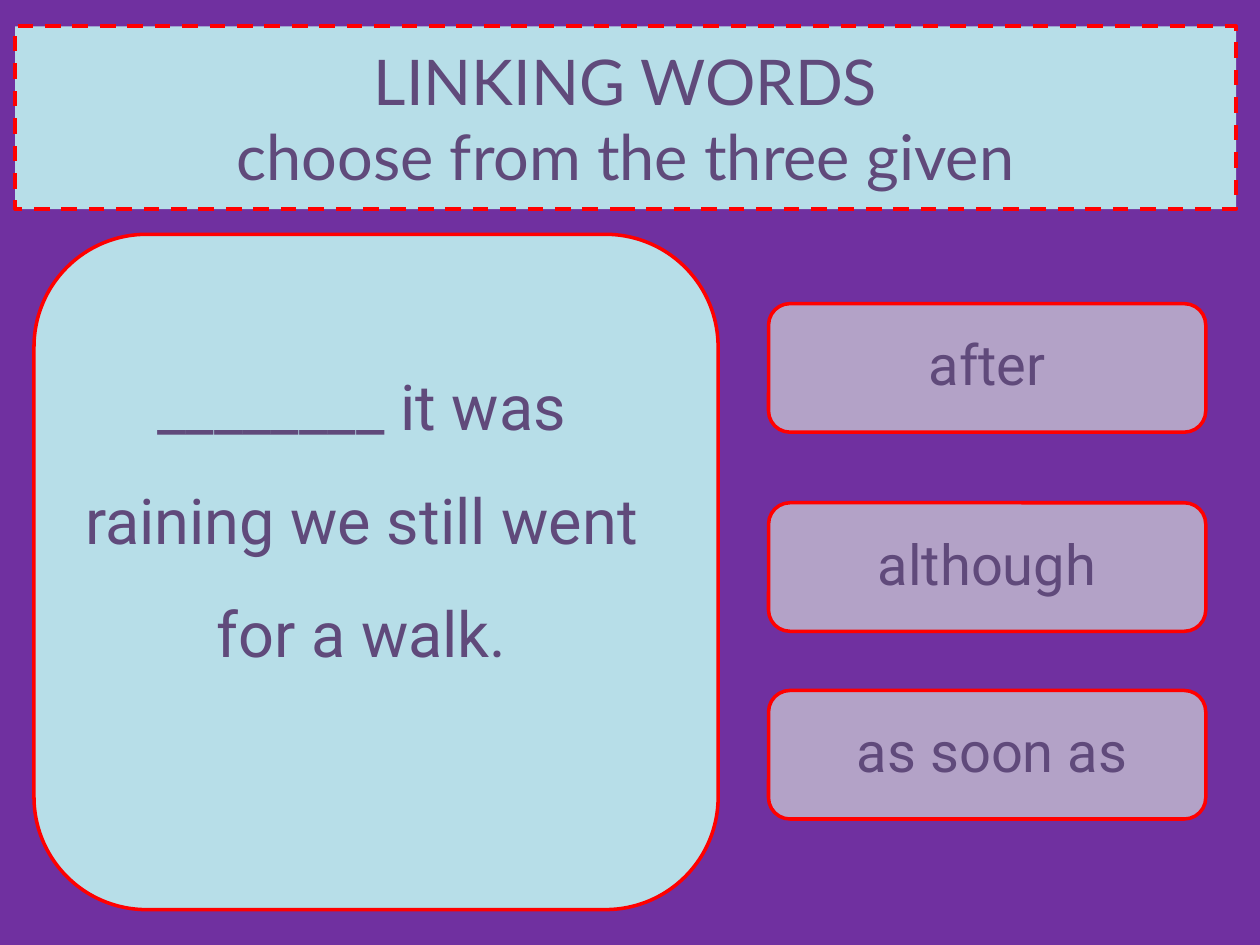
from dataclasses import dataclass

from lxml import etree
from pptx import Presentation
from pptx.dml.color import RGBColor
from pptx.enum import dml, shapes, text
from pptx.oxml import ns
from pptx.util import Inches, Pt


@dataclass(frozen=True)
class Theme:
    background: str = "7030A0"
    panel: str = "B7DEE8"
    option: str = "B3A2C7"
    outline: str = "FF0000"
    ink: str = "604A7B"
    title_font: str = "Lato"
    body_font: str = "Roboto"
    large: int = 36
    medium: int = 32


def write(frame, content, *, font, size, color, spacing=None):
    """Fill a text frame with centred paragraphs, one for each line of content."""
    frame.word_wrap = True
    frame.text = content
    for paragraph in frame.paragraphs:
        paragraph.alignment = text.PP_ALIGN.CENTER
        if spacing:
            paragraph.line_spacing = spacing
        for run in paragraph.runs:
            run.font.name = font
            run.font.size = Pt(size)
            run.font.color.rgb = RGBColor.from_string(color)


class SlideBuilder:
    def __init__(self, slide, theme):
        self.slide = slide
        self.theme = theme

    def background(self):
        fill = self.slide.background.fill
        fill.solid()
        fill.fore_color.rgb = RGBColor.from_string(self.theme.background)

    def paint(self, shape, color, width):
        shape.fill.solid()
        shape.fill.fore_color.rgb = RGBColor.from_string(color)
        shape.line.color.rgb = RGBColor.from_string(self.theme.outline)
        shape.line.width = Pt(width)

    def title(self, content, left, top, width, height):
        """Turn the title placeholder into a dashed, rounded banner."""
        banner = self.slide.shapes.title
        banner.left, banner.top = Inches(left), Inches(top)
        banner.width, banner.height = Inches(width), Inches(height)
        outline = etree.SubElement(
            banner.element.spPr, ns.qn("a:prstGeom"), prst="roundRect")
        etree.SubElement(outline, ns.qn("a:avLst"))
        self.paint(banner, self.theme.panel, 2.25)
        banner.line.dash_style = dml.MSO_LINE.DASH
        write(banner.text_frame, content, font=self.theme.title_font,
              size=self.theme.large, color=self.theme.ink)
        banner.text_frame.auto_size = text.MSO_AUTO_SIZE.NONE
        banner.text_frame.vertical_anchor = text.MSO_ANCHOR.MIDDLE

    def card(self, color, left, top, width, height):
        card = self.slide.shapes.add_shape(
            shapes.MSO_SHAPE.ROUNDED_RECTANGLE,
            Inches(left), Inches(top), Inches(width), Inches(height))
        card.shadow.inherit = False
        self.paint(card, color, 2)

    def label(self, content, left, top, width, height, size, spacing=None):
        label = self.slide.shapes.add_textbox(
            Inches(left), Inches(top), Inches(width), Inches(height))
        write(label.text_frame, content, font=self.theme.body_font,
              size=size, color=self.theme.ink, spacing=spacing)


def main():
    theme = Theme()
    deck = Presentation()
    deck.slide_width, deck.slide_height = Inches(10), Inches(7.5)
    title_only = deck.slide_layouts[5]
    builder = SlideBuilder(deck.slides.add_slide(title_only), theme)

    builder.background()
    builder.title("LINKING WORDS\nchoose from the three given", 0.12, 0.21, 9.69, 1.45)

    builder.card(theme.panel, 0.27, 1.86, 5.43, 5.36)
    builder.label("________ it was raining we still went for a walk.",
                  0.51, 2.57, 4.72, 3.74, theme.large, spacing=1.5)

    option_left, option_width = 6.1, 3.47
    options = [("after", 2.41, 0), ("although", 3.99, 0), ("as soon as", 5.48, 0.08)]
    for word, top, indent in options:
        builder.card(theme.option, option_left, top, option_width, 1.02)
        builder.label(word, option_left + indent, top + 0.16,
                      option_width - indent, 0.64, theme.medium)

    deck.save("out.pptx")


if __name__ == "__main__":
    main()
